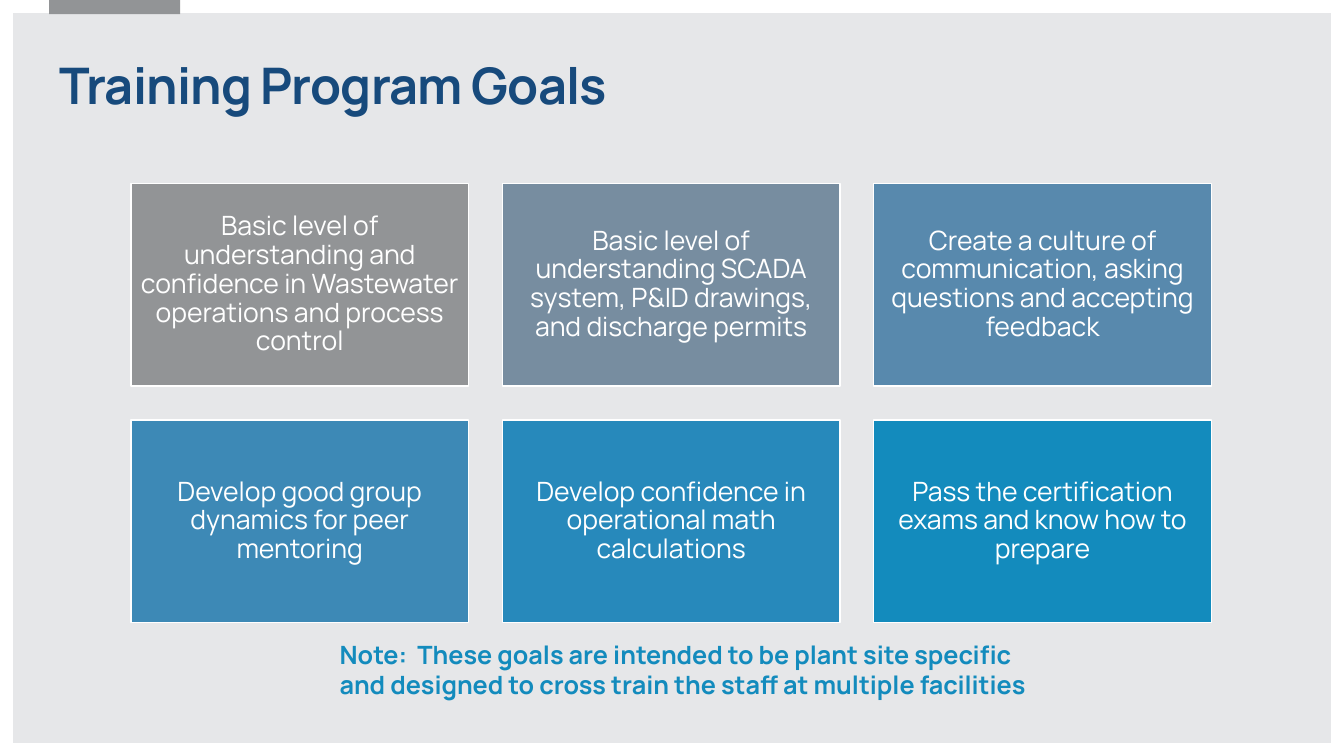
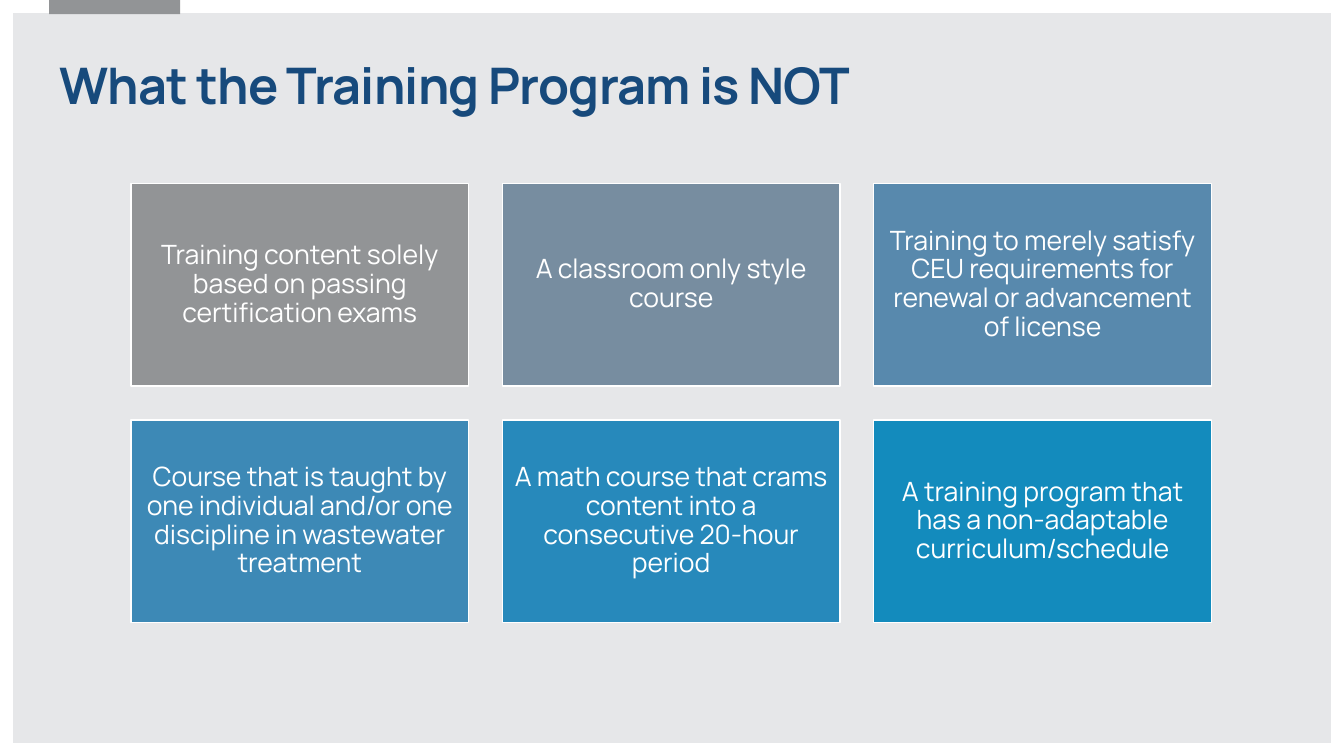
import pptx
import pptx.dml.color
import pptx.enum.shapes
import pptx.enum.text
import pptx.oxml.ns
import pptx.util

Cm = pptx.util.Cm
Pt = pptx.util.Pt
Shape = pptx.enum.shapes.MSO_SHAPE
Align = pptx.enum.text.PP_ALIGN
Anchor = pptx.enum.text.MSO_ANCHOR

COLORS = {
    "back": "E6E7E9",
    "white": "FFFFFF",
    "gray": "929496",
    "slate": "778DA0",
    "steel": "5889AD",
    "blue": "3D89B6",
    "azure": "2789BB",
    "cyan": "138BBD",
    "navy": "174A7C",
}
FONT = "Manrope"
TILES = ["gray", "slate", "steel", "blue", "azure", "cyan"]
COLS = 3
LEFT, TOP = 3.3, 4.62
WIDTH, HEIGHT = 8.51, 5.11
GAP = 0.85

PAGES = [
    {
        "title": "Training Program Goals",
        "goals": [
            "Basic level of understanding and confidence in Wastewater operations and process control",
            "Basic level of understanding SCADA system, P&ID drawings, and discharge permits",
            "Create a culture of communication, asking questions and accepting feedback",
            "Develop good group dynamics for peer mentoring",
            "Develop confidence in operational math calculations",
            "Pass the certification exams and know how to prepare",
        ],
        "note": "Note:  These goals are intended to be plant site specific and designed to cross train the staff at multiple facilities",
    },
    {
        "title": "What the Training Program is NOT",
        "goals": [
            "Training content solely based on passing certification exams",
            "A classroom only style course",
            "Training to merely satisfy CEU requirements for renewal or advancement of license",
            "Course that is taught by one individual and/or one discipline in wastewater treatment",
            "A math course that crams content into a consecutive 20-hour period",
            "A training program that has a non-adaptable curriculum/schedule",
        ],
    },
]


def rgb(name):
    return pptx.dml.color.RGBColor.from_string(COLORS[name])


def write(shape, text, size=19, color="white", bold=False, align=Align.LEFT,
          anchor=Anchor.MIDDLE, lines=0.9, inset=None, track=None):
    frame = shape.text_frame
    frame.word_wrap = True
    frame.vertical_anchor = anchor
    if inset is not None:
        frame.margin_left = frame.margin_right = Cm(inset)
        frame.margin_top = frame.margin_bottom = Cm(inset)
    para = frame.paragraphs[0]
    para.alignment = align
    para.line_spacing = lines
    run = para.add_run()
    run.text = text
    run.font.name = FONT
    run.font.size = Pt(size)
    run.font.bold = bold
    run.font.color.rgb = rgb(color)
    if track is not None:
        for props in shape.element.iter(pptx.oxml.ns.qn("a:rPr")):
            props.set("spc", str(track))


deck = pptx.Presentation()
deck.slide_width = Cm(33.87)
deck.slide_height = Cm(19.05)
fill = deck.slide_master.background.fill
fill.solid()
fill.fore_color.rgb = rgb("back")

for page in PAGES:
    shapes = deck.slides.add_slide(deck.slide_layouts[6]).shapes

    border = shapes.add_shape(Shape.FRAME, 0, 0, deck.slide_width, deck.slide_height)
    border.adjustments[0] = 0.017
    tab = shapes.add_shape(Shape.RECTANGLE, Cm(1.24), 0, Cm(3.3), Cm(0.36))
    for shape, color in ((border, "white"), (tab, "gray")):
        shape.shadow.inherit = False
        shape.fill.solid()
        shape.fill.fore_color.rgb = rgb(color)
        shape.line.fill.background()

    title = shapes.add_textbox(Cm(1.24), Cm(1.4), Cm(31.04), Cm(1.65))
    write(title, page["title"], size=36, color="navy", bold=True, track=-60)

    for index, (goal, color) in enumerate(zip(page["goals"], TILES)):
        row, col = divmod(index, COLS)
        tile = shapes.add_shape(
            Shape.RECTANGLE,
            Cm(LEFT + col * (WIDTH + GAP)), Cm(TOP + row * (HEIGHT + GAP)),
            Cm(WIDTH), Cm(HEIGHT))
        tile.shadow.inherit = False
        tile.fill.solid()
        tile.fill.fore_color.rgb = rgb(color)
        tile.line.color.rgb = rgb("white")
        tile.line.width = Pt(1)
        write(tile, goal, align=Align.CENTER, inset=0.2)

    if "note" in page:
        note = shapes.add_textbox(Cm(8.31), Cm(15.98), Cm(17.88), Cm(1.8))
        write(note, page["note"], size=18, color="cyan", bold=True,
              anchor=Anchor.TOP, lines=1.0)

deck.save("out.pptx")
